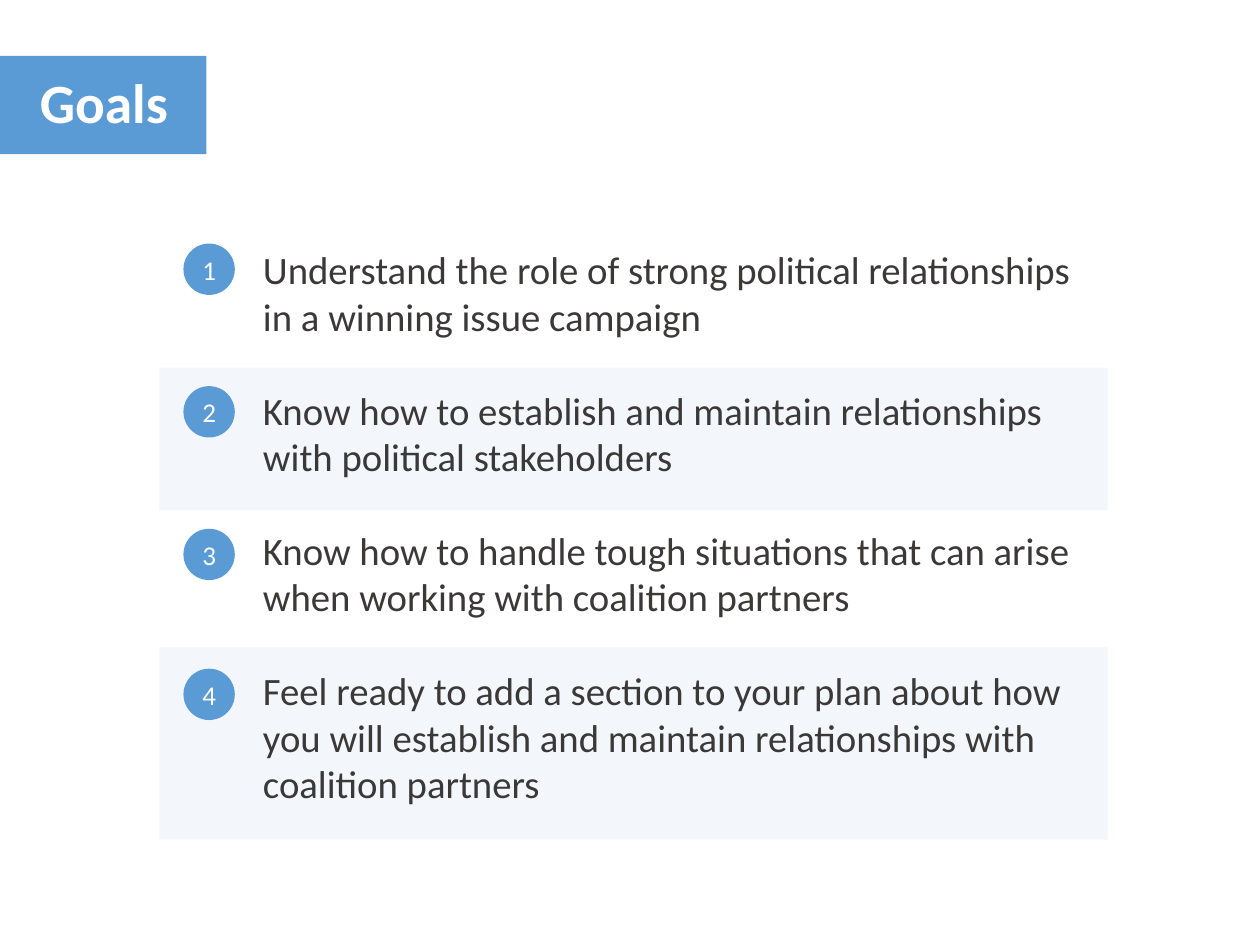
from lxml import etree
from pptx import Presentation
from pptx.dml.color import RGBColor
from pptx.enum.shapes import MSO_SHAPE
from pptx.enum.text import MSO_ANCHOR, PP_ALIGN
from pptx.oxml.ns import qn
from pptx.util import Inches, Pt

RECTANGLE = MSO_SHAPE.RECTANGLE
OVAL = MSO_SHAPE.OVAL
TOP = MSO_ANCHOR.TOP
MIDDLE = MSO_ANCHOR.MIDDLE
LEFT = PP_ALIGN.LEFT
CENTER = PP_ALIGN.CENTER

BLUE = "5B9BD5"
WHITE = "FFFFFF"
DARK = "3B3838"
BADGE_SIZE = 0.58
GOALS = [
    (2.75, "Understand the role of strong political relationships in a winning issue campaign"),
    (4.36, "Know how to establish and maintain relationships with political stakeholders"),
    (5.97, "Know how to handle tough situations that can arise when working with coalition partners"),
    (7.55, "Feel ready to add a section to your plan about how you will establish and maintain "
           "relationships with coalition partners"),
]


def add_blue_shape(kind, left, top, width, height):
    shape = slide.shapes.add_shape(kind, Inches(left), Inches(top), Inches(width), Inches(height))
    shape.shadow.inherit = False
    shape.fill.solid()
    shape.fill.fore_color.rgb = RGBColor.from_string(BLUE)
    shape.line.fill.background()
    return shape


def format_paragraph(paragraph, size, color, alignment, bold=False):
    paragraph.alignment = alignment
    paragraph.font.name = "Calibri"
    paragraph.font.size = Pt(size)
    paragraph.font.bold = bold
    paragraph.font.color.rgb = RGBColor.from_string(color)


presentation = Presentation()
presentation.slide_width = Inches(14.22)
presentation.slide_height = Inches(10.67)
slide = presentation.slides.add_slide(presentation.slide_layouts[5])

for top, height in [(7.31, 2.17), (4.15, 1.61)]:
    band = add_blue_shape(RECTANGLE, 1.8, top, 10.7, height)
    color_element = band.element.spPr.find(qn("a:solidFill"))[0]
    etree.SubElement(color_element, qn("a:alpha"), val="7000")

goals_box = slide.shapes.add_textbox(Inches(2.87), Inches(2.73), Inches(9.46), Inches(6.56))
goals_frame = goals_box.text_frame
goals_frame.word_wrap = True
goals_frame.text = "\n".join(text for top, text in GOALS)
for paragraph in goals_frame.paragraphs:
    format_paragraph(paragraph, 31.5, DARK, LEFT)
for paragraph in goals_frame.paragraphs[1:]:
    paragraph.space_before = Pt(38.5)

banner = add_blue_shape(RECTANGLE, 0, 0.63, 2.33, 1.11)
title = slide.shapes.title
title.left, title.top = Inches(0.35), Inches(0.72)
title.width, title.height = Inches(1.87), Inches(0.86)
title.text_frame.text = "Goals"
title.text_frame.vertical_anchor = TOP
format_paragraph(title.text_frame.paragraphs[0], 45, WHITE, LEFT, bold=True)
banner.element.addnext(title.element)

for number, (top, text) in enumerate(GOALS, start=1):
    badge = add_blue_shape(OVAL, 2.07, top, BADGE_SIZE, BADGE_SIZE)
    badge.text_frame.text = str(number)
    badge.text_frame.vertical_anchor = MIDDLE
    format_paragraph(badge.text_frame.paragraphs[0], 22, WHITE, CENTER)

presentation.save("out.pptx")
